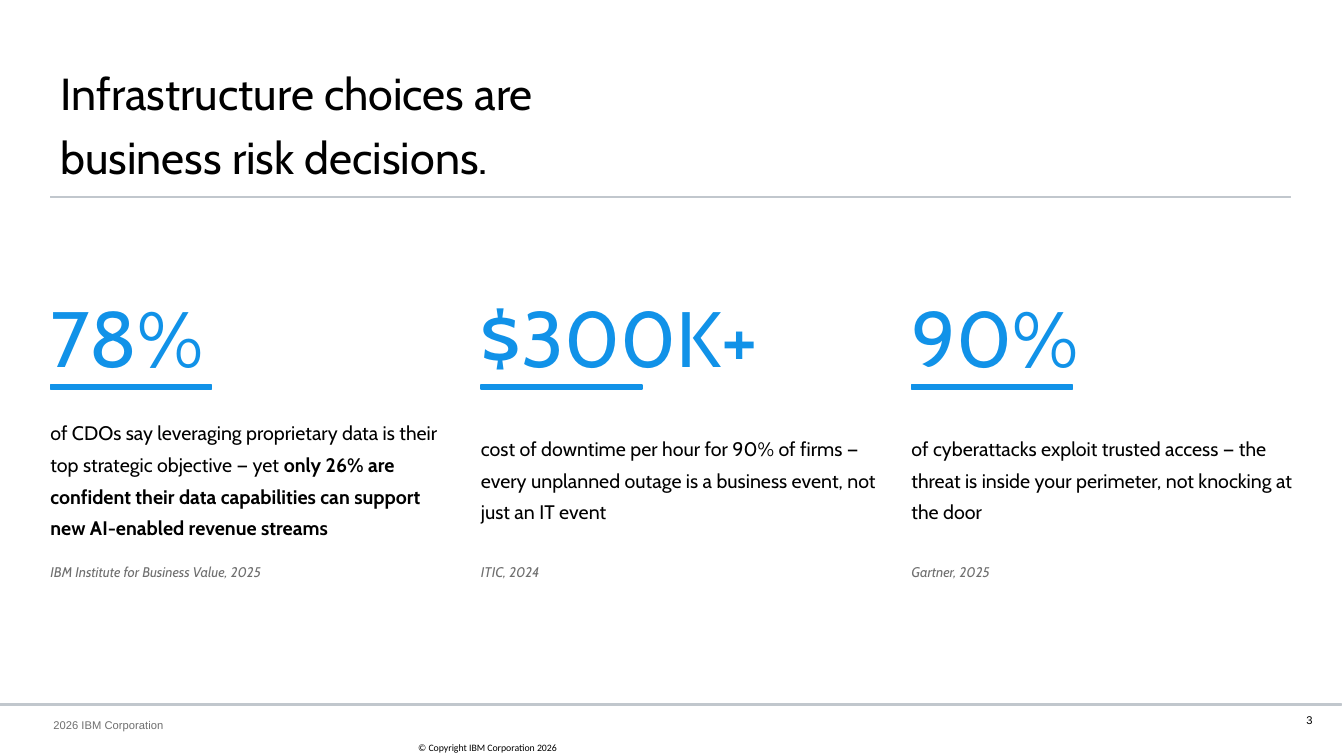
from dataclasses import dataclass

from pptx import Presentation
from pptx.dml.color import RGBColor
from pptx.enum.shapes import MSO_SHAPE
from pptx.enum.text import MSO_ANCHOR, MSO_AUTO_SIZE, PP_ALIGN
from pptx.util import Inches, Pt

RECTANGLE = MSO_SHAPE.RECTANGLE
MIDDLE, BOTTOM = MSO_ANCHOR.MIDDLE, MSO_ANCHOR.BOTTOM
LEFT, RIGHT = PP_ALIGN.LEFT, PP_ALIGN.RIGHT
NO_AUTOFIT = MSO_AUTO_SIZE.NONE
TITLE_ONLY = 5

# Grid, in inches
SLIDE_W, SLIDE_H = 13.33, 7.5
MARGIN = 0.5
CONTENT_W = 12.3
COLUMN_W, COLUMN_PITCH = 4, 4.27
ROWS = {  # top, height
    "title": (0.51, 1.35),
    "title_rule": (1.95, 0.01),
    "figure": (2.45, 1.35),
    "accent": (3.82, 0.04),
    "claim": (3.95, 1.55),
    "citation": (5.55, 0.25),
    "footer_rule": (6.98, 0.02),
    "footer": (7.02, 0.35),
    "page": (7.08, 0.13),
    "copyright": (7.31, 0.22),
}


@dataclass(frozen=True)
class Theme:
    ink: str = "000000"
    accent: str = "1192E8"
    rule: str = "C1C7CD"
    muted: str = "6F6F6F"
    rule_pt: float = 1

    def style(self, role):
        """Font values and colour for one kind of text."""
        return {
            "title": ({"name": "Cabin", "size": Pt(32)}, self.ink),
            "figure": ({"name": "Cabin", "size": Pt(56)}, self.accent),
            "claim": ({"name": "Cabin", "size": Pt(14)}, self.ink),
            "citation": ({"name": "Cabin", "size": Pt(10), "italic": True}, self.muted),
            "footer": ({"name": "Arial", "size": Pt(8)}, self.muted),
            "page": ({"name": "Arial", "size": Pt(8)}, self.ink),
            "copyright": ({"name": "Calibri", "size": Pt(7)}, self.ink),
        }[role]


THEME = Theme()

TITLE_LINES = ["Infrastructure choices are", "business risk decisions."]

# Figure, claim as (text, bold) runs, citation
STATISTICS = [
    ("78%",
     [("of CDOs say leveraging proprietary data is their top strategic objective — yet ", False),
      ("only 26% are confident their data capabilities can support "
       "new AI-enabled revenue streams", True)],
     "IBM Institute for Business Value, 2025"),
    ("$300K+",
     [("cost of downtime per hour for 90% of firms — every unplanned outage "
       "is a business event, not just an IT event", False)],
     "ITIC, 2024"),
    ("90%",
     [("of cyberattacks exploit trusted access — the threat is inside your "
       "perimeter, not knocking at the door", False)],
     "Gartner, 2025"),
]


def apply(target, values):
    for name, value in values.items():
        setattr(target, name, value)


def place(row, left, width):
    top, height = ROWS[row]
    return [Inches(length) for length in (left, top, width, height)]


def write_paragraph(paragraph, runs, role, **paragraph_format):
    font_values, color = THEME.style(role)
    apply(paragraph, paragraph_format)
    for text, bold in runs:
        run = paragraph.add_run()
        run.text = text
        apply(run.font, {**font_values, "bold": bold})
        run.font.color.rgb = RGBColor.from_string(color)


def add_title(slide, lines):
    title = slide.shapes.title
    position = place("title", MARGIN, CONTENT_W)
    apply(title, dict(zip(("left", "top", "width", "height"), position)))
    frame = title.text_frame
    apply(frame, {"word_wrap": True, "auto_size": NO_AUTOFIT, "vertical_anchor": MIDDLE})
    for index, line in enumerate(lines):
        paragraph = frame.add_paragraph() if index else frame.paragraphs[0]
        write_paragraph(paragraph, [(line, False)], "title", alignment=LEFT, line_spacing=1.2)


def add_text(slide, role, left, width, runs, anchor=MIDDLE, inset=0, wrap=True,
             **paragraph_format):
    frame = slide.shapes.add_textbox(*place(role, left, width)).text_frame
    apply(frame, {"word_wrap": wrap, "vertical_anchor": anchor,
                  "margin_left": Inches(inset), "margin_right": Inches(inset),
                  "margin_top": Inches(inset / 2), "margin_bottom": Inches(inset / 2)})
    write_paragraph(frame.paragraphs[0], runs, role, **paragraph_format)


def add_rule(slide, row, left, width, color):
    rule = slide.shapes.add_shape(RECTANGLE, *place(row, left, width))
    rule.shadow.inherit = False
    rule.fill.solid()
    rule.fill.fore_color.rgb = rule.line.color.rgb = RGBColor.from_string(color)
    rule.line.width = Pt(THEME.rule_pt)


def add_statistic(slide, column, figure, claim, citation):
    left = MARGIN + column * COLUMN_PITCH
    add_text(slide, "figure", left, COLUMN_W, [(figure, False)], BOTTOM)
    add_rule(slide, "accent", left, COLUMN_W * 0.4, THEME.accent)
    add_text(slide, "claim", left, COLUMN_W, claim, line_spacing=1.35)
    add_text(slide, "citation", left, COLUMN_W, [(citation, False)])


def add_footer(slide):
    add_rule(slide, "footer_rule", 0, 13.3, THEME.rule)
    add_text(slide, "footer", MARGIN + 0.03, 9.5, [("2026 IBM Corporation", False)])
    add_text(slide, "page", 12.88, 0.14, [("3", False)], BOTTOM, wrap=False, alignment=RIGHT)
    add_text(slide, "copyright", 4.05, 1.77,
             [("© Copyright IBM Corporation 2026", False)], inset=0.1)


def main():
    deck = Presentation()
    deck.slide_width, deck.slide_height = Inches(SLIDE_W), Inches(SLIDE_H)
    slide = deck.slides.add_slide(deck.slide_layouts[TITLE_ONLY])

    # Heading
    add_title(slide, TITLE_LINES)
    add_rule(slide, "title_rule", MARGIN, CONTENT_W, THEME.rule)

    # Three statistics
    for column, statistic in enumerate(STATISTICS):
        add_statistic(slide, column, *statistic)

    # Footer
    add_footer(slide)
    deck.save("out.pptx")


if __name__ == "__main__":
    main()
